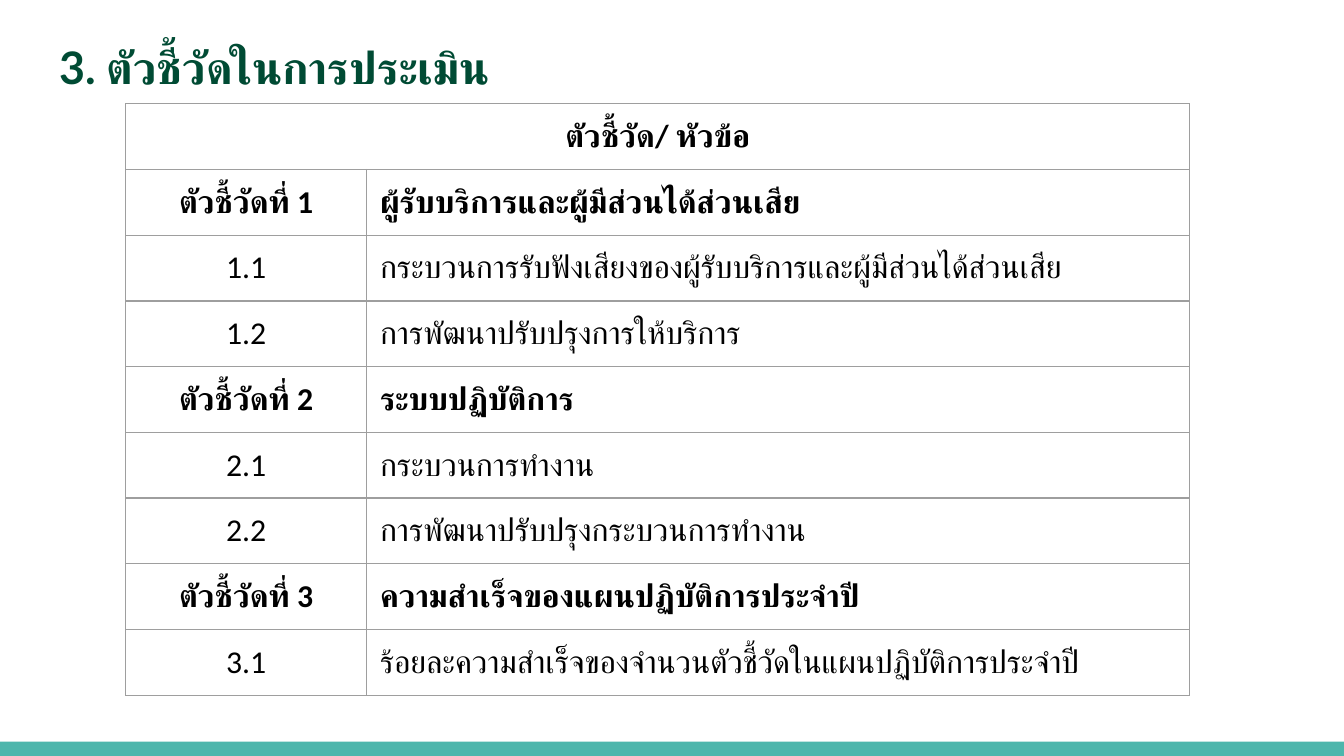
from lxml.etree import SubElement
from pptx import Presentation
from pptx.dml.color import RGBColor
from pptx.enum.shapes import MSO_SHAPE as SHAPE
from pptx.enum.text import MSO_ANCHOR as ANCHOR, PP_ALIGN as ALIGN
from pptx.oxml.ns import qn
from pptx.util import Pt

WHITE = RGBColor(0xFF, 0xFF, 0xFF)
BLACK = RGBColor(0, 0, 0)
GREEN = RGBColor(0x00, 0x4B, 0x34)
TEAL = RGBColor(0x4D, 0xB6, 0xAC)
GREY = RGBColor(0x9E, 0x9E, 0x9E)

HEADING = "ตัวชี้วัด/ หัวข้อ"
INDICATORS = [
    ("ตัวชี้วัดที่ 1", "ผู้รับบริการและผู้มีส่วนได้ส่วนเสีย"),
    ("1.1", "กระบวนการรับฟังเสียงของผู้รับบริการและผู้มีส่วนได้ส่วนเสีย"),
    ("1.2", "การพัฒนาปรับปรุงการให้บริการ"),
    ("ตัวชี้วัดที่ 2", "ระบบปฏิบัติการ"),
    ("2.1", "กระบวนการทำงาน"),
    ("2.2", "การพัฒนาปรับปรุงกระบวนการทำงาน"),
    ("ตัวชี้วัดที่ 3", "ความสำเร็จของแผนปฏิบัติการประจำปี"),
    ("3.1", "ร้อยละความสำเร็จของจำนวนตัวชี้วัดในแผนปฏิบัติการประจำปี"),
]


class Deck:
    """Holds the style and the current slide, and draws each kind of element."""

    title_font, body_font = "Lato", "Calibri"
    title_size, body_size = 24, 17
    inset = Pt(7.2)

    def __init__(self, width, height):
        self.prs = Presentation()
        self.prs.slide_width, self.prs.slide_height = Pt(width), Pt(height)
        self.s = self.prs.slides.add_slide(self.prs.slide_layouts[5])
        self.s.background.fill.solid()
        self.s.background.fill.fore_color.rgb = WHITE

    def text(self, tf, text, font, size, color, bold, align):
        tf.text = text
        p = tf.paragraphs[0]
        p.alignment = align
        r = p.runs[0]
        r.font.name, r.font.size, r.font.bold = font, Pt(size), bold
        r.font.color.rgb = color
        for tag in ("a:ea", "a:cs"):
            SubElement(r.font._element, qn(tag), typeface=font)

    def bar(self, x, y, w, h, color):
        sp = self.s.shapes.add_shape(SHAPE.RECTANGLE, Pt(x), Pt(y), Pt(w), Pt(h))
        sp.shadow.inherit = False
        sp.fill.solid()
        sp.fill.fore_color.rgb = color
        sp.line.fill.background()

    def title(self, text, x, y, w, h):
        sp = self.s.shapes.title
        sp.left, sp.top, sp.width, sp.height = Pt(x), Pt(y), Pt(w), Pt(h)
        tf = sp.text_frame
        tf.margin_left = tf.margin_right = tf.margin_top = tf.margin_bottom = self.inset
        tf.vertical_anchor = ANCHOR.MIDDLE
        self.text(tf, text, self.title_font, self.title_size, GREEN, True, ALIGN.LEFT)

    def cell(self, cell, text, bold, align):
        cell.margin_left = cell.margin_right = self.inset
        cell.margin_top = cell.margin_bottom = self.inset
        self.text(cell.text_frame, text, self.body_font, self.body_size, BLACK, bold, align)

    def border(self, cell):
        tc_pr = cell._tc.get_or_add_tcPr()
        for tag in ("a:lnL", "a:lnR", "a:lnT", "a:lnB"):
            ln = SubElement(tc_pr, qn(tag), w=str(Pt(0.75)))
            SubElement(SubElement(ln, qn("a:solidFill")), qn("a:srgbClr"), val=str(GREY))
        cell.fill.background()

    def table(self, heading, rows, x, y, widths, row_height):
        count = len(rows) + 1
        frame = self.s.shapes.add_table(
            count, len(widths), Pt(x), Pt(y), Pt(sum(widths)), Pt(row_height * count))
        tbl = frame.table
        tbl.first_row = tbl.horz_banding = False
        for column, width in zip(tbl.columns, widths):
            column.width = Pt(width)
        for cell in tbl.iter_cells():
            self.border(cell)
        tbl.cell(0, 0).merge(tbl.cell(0, len(widths) - 1))
        self.cell(tbl.cell(0, 0), heading, True, ALIGN.CENTER)
        for i, (number, topic) in enumerate(rows, 1):
            bold = "." not in number
            self.cell(tbl.cell(i, 0), number, bold, ALIGN.CENTER)
            self.cell(tbl.cell(i, 1), topic, bold, ALIGN.LEFT)


def main():
    deck = Deck(720, 405)
    deck.bar(0, 397.4, 720, 7.6, TEAL)
    deck.title("3. ตัวชี้วัดในการประเมิน", 24.5, 8, 671, 55.5)
    deck.table(HEADING, INDICATORS, 67.4, 55.6, (129, 441), 35.1)
    deck.prs.save("out.pptx")


if __name__ == "__main__":
    main()
